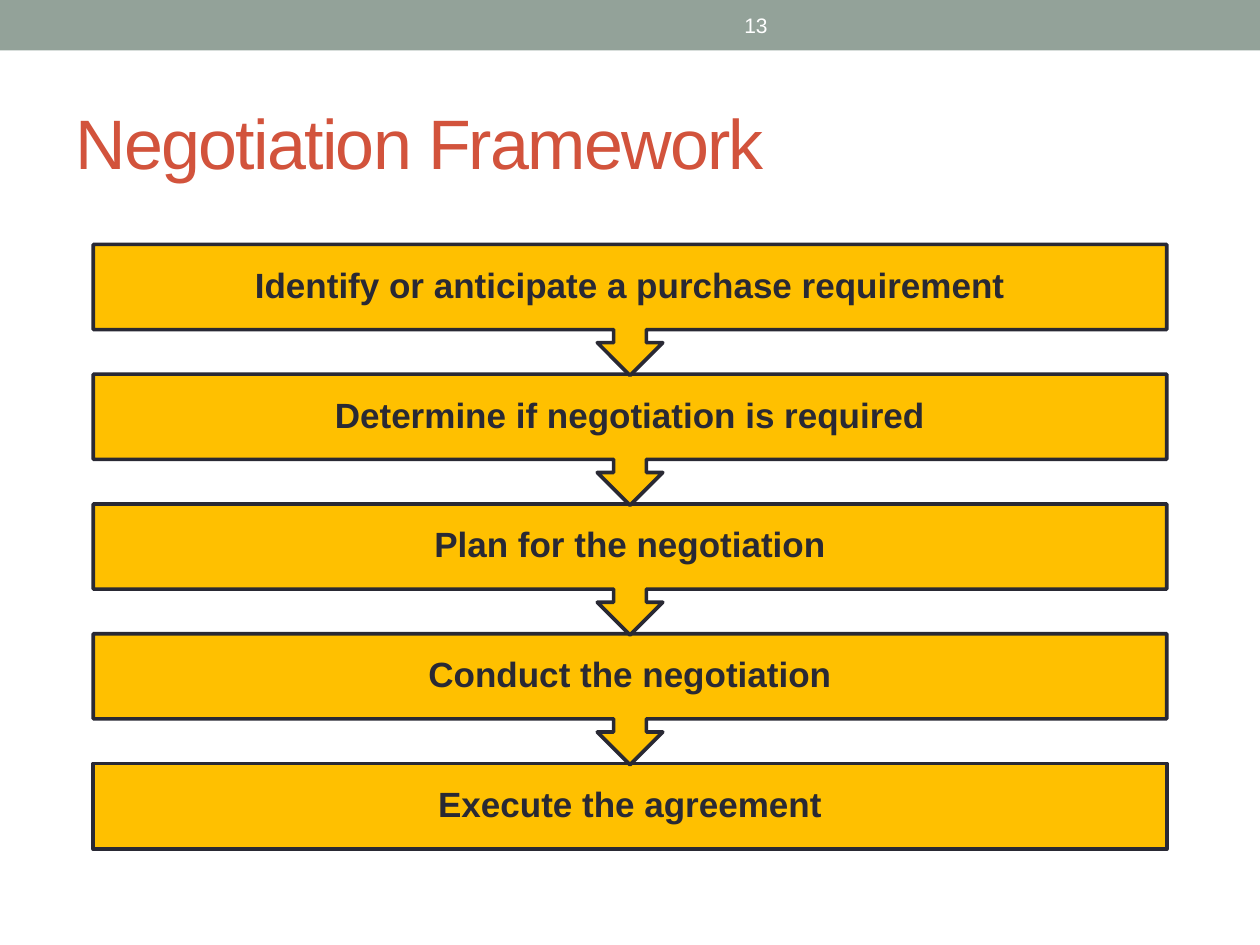
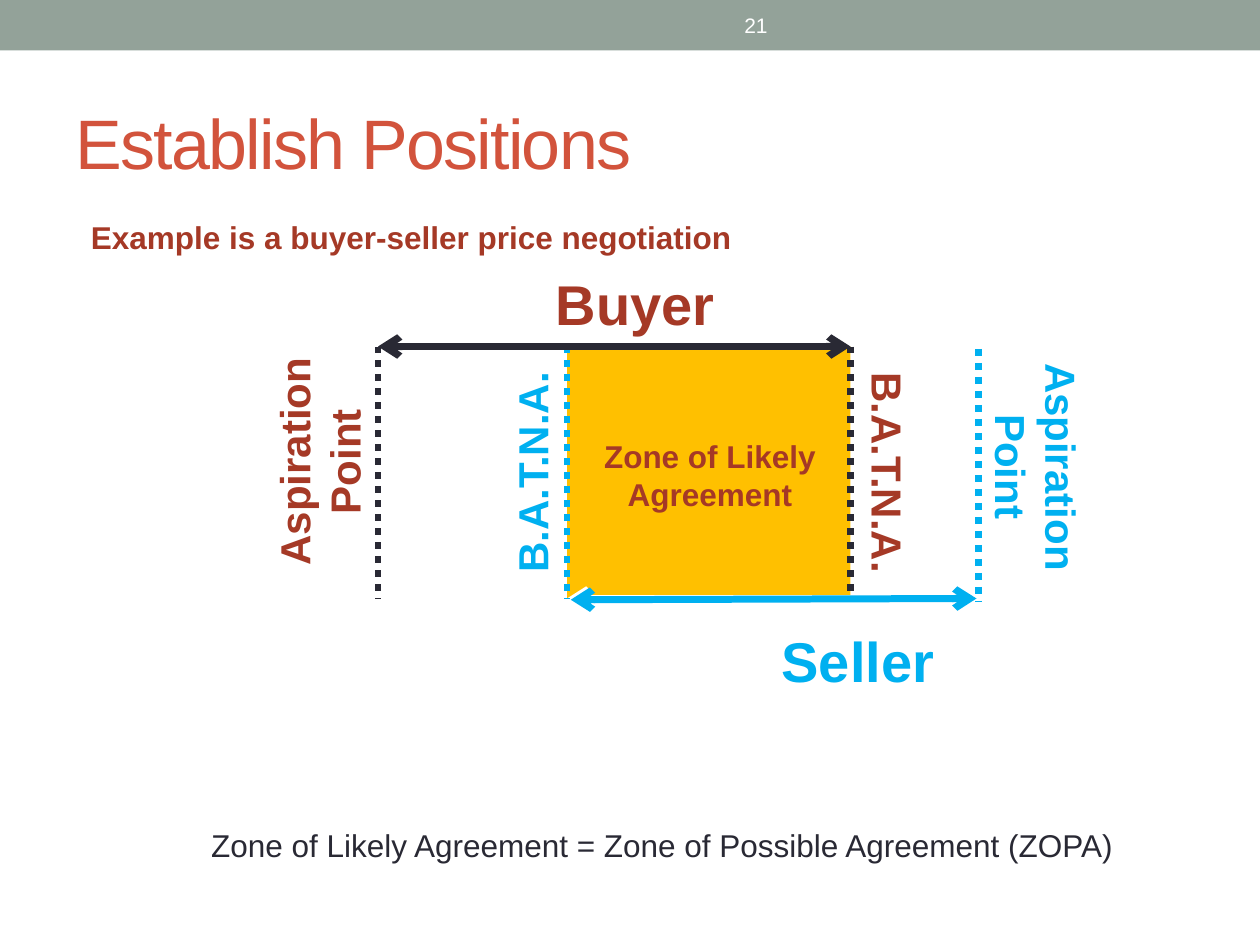
"""Build two slides on negotiation: the framework steps and the buyer-seller positions."""
from lxml import etree
from pptx import Presentation
from pptx import util as u
from pptx.dml.color import RGBColor
from pptx.enum import dml, shapes, text
from pptx.oxml import ns

BAND = RGBColor(0x93, 0xA2, 0x99)
TITLE = RGBColor(0xD2, 0x53, 0x3C)
DARK = RGBColor(0x29, 0x29, 0x34)
GOLD = RGBColor(0xFF, 0xC0, 0x00)
BUYER = RGBColor(0xA5, 0x39, 0x26)
SELLER = RGBColor(0x00, 0xB0, 0xF0)
WHITE = RGBColor(0xFF, 0xFF, 0xFF)
FONT = "Arial"


def write(sp, words, size, color, bold=False, align=text.PP_ALIGN.CENTER,
          anchor=text.MSO_ANCHOR.MIDDLE):
    """Put one formatted run in a shape and return the run."""
    tf = sp.text_frame
    tf.word_wrap = True
    tf.auto_size = text.MSO_AUTO_SIZE.NONE
    tf.vertical_anchor = anchor
    p = tf.paragraphs[0]
    p.alignment = align
    r = p.add_run()
    r.text = words
    r.font.name = FONT
    r.font.size = u.Pt(size)
    r.font.bold = bold
    r.font.color.rgb = color
    return r


def add_line(s, x1, y1, x2, y2, color, arrows=False):
    """Draw a thick line: dotted, or solid with an arrowhead at each end."""
    c = s.shapes.add_connector(shapes.MSO_CONNECTOR.STRAIGHT, u.Inches(x1),
                               u.Inches(y1), u.Inches(x2), u.Inches(y2))
    c.line.color.rgb = color
    c.line.width = u.Pt(4)
    if arrows:
        ln = c.line._get_or_add_ln()
        for end in ("a:headEnd", "a:tailEnd"):
            etree.SubElement(ln, ns.qn(end), type="arrow")
    else:
        c.line.dash_style = dml.MSO_LINE.ROUND_DOT
    etree.SubElement(c._element.spPr, ns.qn("a:effectLst"))


prs = Presentation()
prs.slide_width, prs.slide_height = u.Inches(10), u.Inches(7.5)

for title, number in (("Negotiation Framework", "13"), ("Establish Positions", "21")):
    s = prs.slides.add_slide(prs.slide_layouts[5])
    sp = s.shapes.title
    sp.left, sp.top = u.Inches(0.5), u.Inches(0.58)
    sp.width, sp.height = u.Inches(9), u.Inches(1.08)
    r = write(sp, title, 40, TITLE, align=text.PP_ALIGN.LEFT)
    r.font._element.set("spc", "-100")
    band = s.shapes.add_shape(shapes.MSO_SHAPE.RECTANGLE, 0, 0,
                              prs.slide_width, u.Inches(0.4))
    band.shadow.inherit = False
    band.fill.solid()
    band.fill.fore_color.rgb = BAND
    band.line.fill.background()
    sp = s.shapes.add_textbox(u.Inches(3.75), u.Inches(0.02), u.Inches(4.5), u.Inches(0.36))
    write(sp, number, 12, WHITE)

framework, positions = prs.slides

steps = ("Identify or anticipate a purchase requirement",
         "Determine if negotiation is required",
         "Plan for the negotiation",
         "Conduct the negotiation",
         "Execute the agreement")
STEP_TOP, STEP_PITCH, BOX_H, CALLOUT_H = 1.94, 1.03, 0.68, 1.04
for i, step in reversed(list(enumerate(steps))):
    last = i == len(steps) - 1
    kind = shapes.MSO_SHAPE.RECTANGLE if last else shapes.MSO_SHAPE.DOWN_ARROW_CALLOUT
    sp = framework.shapes.add_shape(
        kind, u.Inches(0.74), u.Inches(STEP_TOP + i * STEP_PITCH),
        u.Inches(8.52), u.Inches(BOX_H if last else CALLOUT_H))
    if not last:
        sp.adjustments[3] = 0.65
    sp.shadow.inherit = False
    sp.fill.solid()
    sp.fill.fore_color.rgb = GOLD
    sp.line.color.rgb = DARK
    sp.line.width = u.Pt(2.08)
    write(sp, step, 20, DARK, bold=True)
    sp.text_frame.paragraphs[0].line_spacing = 0.9

TOP, BOTTOM = 2.75, 4.75
BUYER_GOAL, SELLER_LIMIT, BUYER_LIMIT, SELLER_GOAL = 3, 4.5, 6.75, 7.75

zone = positions.shapes.add_shape(
    shapes.MSO_SHAPE.RECTANGLE, u.Inches(SELLER_LIMIT), u.Inches(TOP),
    u.Inches(BUYER_LIMIT - SELLER_LIMIT), u.Inches(BOTTOM - TOP))
zone.shadow.inherit = False
zone.fill.solid()
zone.fill.fore_color.rgb = GOLD
zone.line.fill.background()

for x in (BUYER_GOAL, BUYER_LIMIT):
    add_line(positions, x, TOP, x, BOTTOM, DARK)

labels = (
    ("Buyer", 4.08, 2.09, 1.92, 0.64, 0, 32, BUYER, True),
    ("Seller", 5.85, 4.92, 1.92, 0.64, 0, 32, SELLER, True),
    ("Aspiration Point", 7.1, 3.25, 2.25, 0.91, 90, 24, SELLER, True),
    ("Aspiration Point", 1.45, 3.21, 2.17, 0.91, 270, 24, BUYER, True),
    ("B.A.T.N.A.", 3.22, 3.5, 2, 0.5, 270, 24, SELLER, True),
    ("B.A.T.N.A.", 6.05, 3.5, 2, 0.5, 90, 24, BUYER, True),
    ("Zone of Likely Agreement", 4.67, 3.42, 1.93, 0.71, 0, 18, BUYER, True),
    ("Example is a buyer-seller price negotiation", 0.53, 1.68, 5.47, 0.4, 0, 18, BUYER, True),
    ("Zone of Likely Agreement = Zone of Possible Agreement (ZOPA)",
     1.14, 6.51, 8.23, 0.4, 0, 18, DARK, False),
)
for words, x, y, w, h, turn, size, color, bold in labels:
    sp = positions.shapes.add_textbox(u.Inches(x), u.Inches(y), u.Inches(w), u.Inches(h))
    sp.rotation = turn
    write(sp, words, size, color, bold, anchor=text.MSO_ANCHOR.TOP)

add_line(positions, SELLER_LIMIT, BOTTOM, SELLER_GOAL, BOTTOM, WHITE, arrows=True)
add_line(positions, SELLER_LIMIT, TOP, SELLER_LIMIT, BOTTOM, SELLER)
add_line(positions, BUYER_GOAL, TOP, BUYER_LIMIT, TOP, DARK, arrows=True)
add_line(positions, SELLER_LIMIT + 0.03, BOTTOM + 0.01, SELLER_GOAL, BOTTOM, SELLER, arrows=True)
add_line(positions, SELLER_GOAL + 0.02, TOP + 0.02, SELLER_GOAL + 0.02, BOTTOM + 0.02, SELLER)

prs.save("out.pptx")
